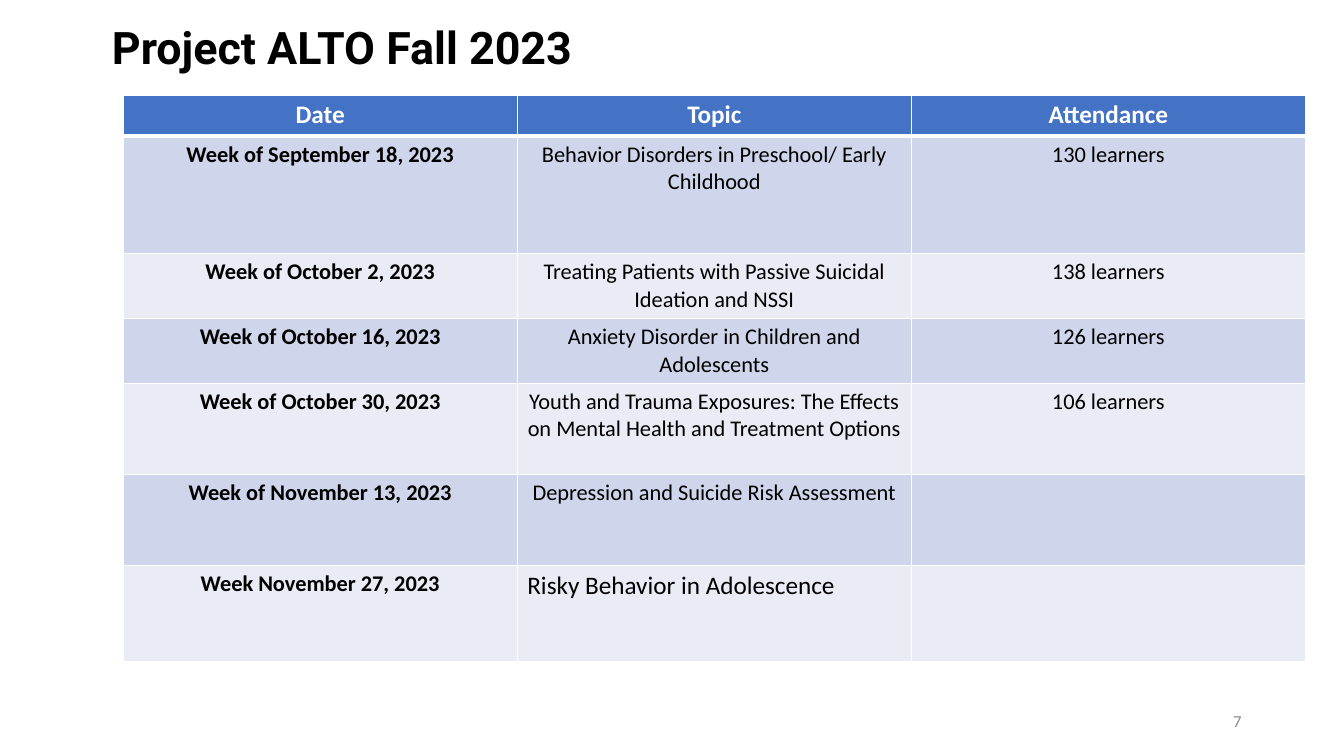
"""Build the Project ALTO Fall 2023 attendance slide."""
from lxml.etree import SubElement
from pptx import Presentation
from pptx.dml.color import RGBColor
from pptx.enum.text import MSO_ANCHOR, PP_ALIGN
from pptx.oxml.ns import qn
from pptx.util import Pt


def rgb(color):
    return RGBColor.from_string(color)


def put_text(tf, text, size=16, font="Calibri", color="000000", bold=False,
             align=PP_ALIGN.CENTER, anchor=MSO_ANCHOR.TOP):
    tf.word_wrap = True
    tf.vertical_anchor = anchor
    p = tf.paragraphs[0]
    p.alignment = align
    r = p.add_run()
    r.text = text
    r.font.size, r.font.name, r.font.bold = Pt(size), font, bold
    r.font.color.rgb = rgb(color)


prs = Presentation()
prs.slide_width, prs.slide_height = Pt(960), Pt(540)
s = prs.slides.add_slide(prs.slide_layouts[5])

title = s.shapes.title
title.left, title.top, title.width, title.height = Pt(72.7), Pt(10.8), Pt(746), Pt(152.6)
put_text(title.text_frame, "Project ALTO Fall 2023", size=32, font="Roboto",
         bold=True, align=PP_ALIGN.LEFT)

rows = [
    ("Date", "Topic", "Attendance"),
    ("Week of September 18, 2023", "Behavior Disorders in Preschool/ Early Childhood", "130 learners"),
    ("Week of October 2, 2023", "Treating Patients with Passive Suicidal Ideation and NSSI", "138 learners"),
    ("Week of October 16, 2023", "Anxiety Disorder in Children and Adolescents", "126 learners"),
    ("Week of October 30, 2023",
     "Youth and Trauma Exposures: The Effects on Mental Health and Treatment Options", "106 learners"),
    ("Week of November 13, 2023", "Depression and Suicide Risk Assessment", ""),
    ("Week November 27, 2023", "Risky Behavior in Adolescence", ""),
]
heights = [29, 84, 45.6, 45.6, 65, 65, 69]

tbl = s.shapes.add_table(len(rows), 3, Pt(88), Pt(67.8), Pt(844.5), Pt(sum(heights))).table
for col in tbl.columns:
    col.width = Pt(281.5)

for i, (row, height) in enumerate(zip(rows, heights)):
    tbl.rows[i].height = Pt(height)
    for j, text in enumerate(row):
        cell = tbl.cell(i, j)
        tcPr = cell._tc.get_or_add_tcPr()
        for side in ("lnL", "lnR", "lnT", "lnB"):
            under_header = (i, side) in ((0, "lnB"), (1, "lnT"))
            ln = SubElement(tcPr, qn(f"a:{side}"), w=str(Pt(3 if under_header else 1)))
            SubElement(SubElement(ln, qn("a:solidFill")), qn("a:srgbClr"), val="FFFFFF")
        cell.fill.solid()
        cell.fill.fore_color.rgb = rgb("4472C4" if i == 0 else "CFD5EA" if i % 2 else "E9EBF5")
        if text:
            last_topic = i == len(rows) - 1 and j == 1
            put_text(cell.text_frame, text, size=18 if i == 0 or last_topic else 16,
                     color="FFFFFF" if i == 0 else "000000", bold=i == 0 or j == 0,
                     align=PP_ALIGN.LEFT if last_topic else PP_ALIGN.CENTER)

number = s.shapes.add_textbox(Pt(678), Pt(500.5), Pt(216), Pt(28.8))
put_text(number.text_frame, "7", size=12, color="8C8C8C",
         align=PP_ALIGN.RIGHT, anchor=MSO_ANCHOR.MIDDLE)

prs.save("out.pptx")
